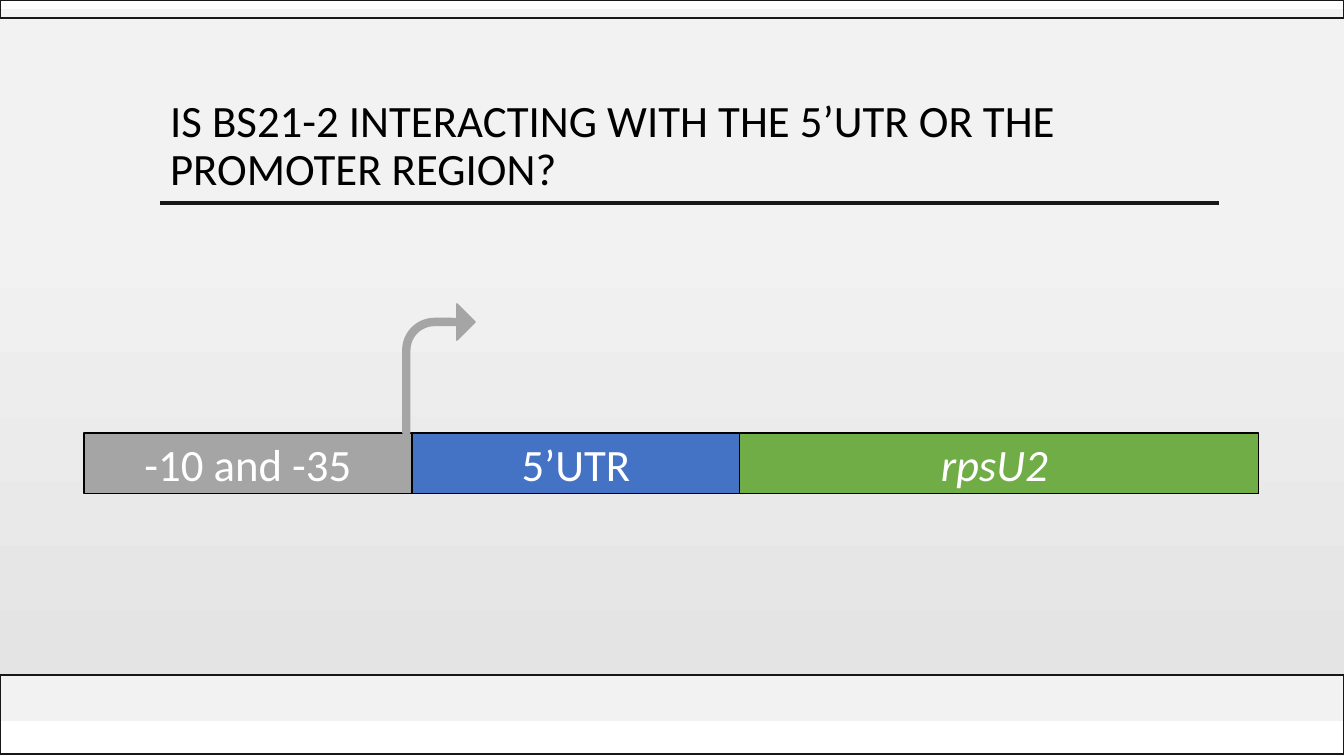
from dataclasses import dataclass

from lxml.etree import SubElement
from pptx import Presentation
from pptx.dml.color import RGBColor
from pptx.enum.shapes import MSO_CONNECTOR, MSO_SHAPE
from pptx.enum.text import MSO_ANCHOR, PP_ALIGN
from pptx.oxml.ns import qn
from pptx.util import Emu, Pt

W, H = 1344, 756


@dataclass(frozen=True)
class Theme:
    """Colours, font and type size of the slide."""
    font: str = "Calibri"
    size: int = 32
    panel: str = "F2F2F2"
    shade: str = "E4E4E4"
    rule: str = "181717"
    edge: str = "000001"
    black: str = "000000"
    white: str = "FFFFFF"
    grey: str = "A5A5A5"
    blue: str = "4472C4"
    green: str = "70AD47"


T = Theme()


def px(n):
    """Turn pixels into EMU."""
    return Emu(round(n * 914400 / 100.8))


def rgb(color):
    """Turn a hex string into a colour."""
    return RGBColor.from_string(color)


def add_box(shapes, box, fill=None, line=None, width=1, kind=MSO_SHAPE.RECTANGLE):
    """Add a preset shape with the given fill and outline."""
    sp = shapes.add_shape(kind, *map(px, box))
    sp.shadow.inherit = False
    if fill:
        sp.fill.solid()
        sp.fill.fore_color.rgb = rgb(fill)
    else:
        sp.fill.background()
    if line:
        sp.line.color.rgb = rgb(line)
        sp.line.width = Pt(width)
    else:
        sp.line.fill.background()
    return sp


def add_shade(shapes, box):
    """Add the panel that darkens towards the bottom."""
    sp = add_box(shapes, box)
    sp.fill.gradient()
    sp.fill.gradient_angle = 270
    for stop, color, position in zip(sp.fill.gradient_stops, (T.panel, T.shade), (0, 1)):
        stop.color.rgb = rgb(color)
        stop.position = position


def add_rule(shapes, x1, x2, y, color, width, opacity=100):
    """Add a horizontal line."""
    cn = shapes.add_connector(MSO_CONNECTOR.STRAIGHT, px(x1), px(y), px(x2), px(y))
    cn.line.color.rgb = rgb(color)
    cn.line.width = Pt(width)
    sp_pr = cn._element.spPr
    if opacity < 100:
        clr = sp_pr.find(".//" + qn("a:srgbClr"))
        SubElement(clr, qn("a:alpha")).set("val", str(opacity * 1000))
    SubElement(sp_pr, qn("a:effectLst"))


def set_text(tf, text, color, align, italic=False):
    """Write one formatted paragraph into a text frame."""
    tf.word_wrap = True
    tf.vertical_anchor = MSO_ANCHOR.MIDDLE
    p = tf.paragraphs[0]
    p.text = text
    p.alignment = align
    p.font.name = T.font
    p.font.size = Pt(T.size)
    p.font.italic = italic
    p.font.color.rgb = rgb(color)
    return p


def add_title(s, text, box):
    """Place and format the title in front of the backdrop."""
    title = s.shapes.title
    title.left, title.top, title.width, title.height = map(px, box)
    p = set_text(title.text_frame, text, T.black, PP_ALIGN.LEFT)
    p.line_spacing = 0.9
    title._element.getparent().append(title._element)


def add_backdrop(shapes):
    """Add the panels, frames and rules behind the content."""
    add_box(shapes, (0, 10, W, 710), T.panel, T.panel, 1.25)
    add_shade(shapes, (0, 223, W, 452))
    add_rule(shapes, 0, W, 675, T.edge, 1, opacity=20)
    for top, height in ((675, 79), (0, 18)):
        add_box(shapes, (0, top, W, height), line=T.rule)
    add_rule(shapes, 160, 1219, 203, T.rule, 2.5)


def add_gene(shapes, left, top, height):
    """Add the row of gene regions and the transcription start arrow."""
    regions = (
        ("-10 and -35", 328, T.grey, False),
        ("5’UTR", 328, T.blue, False),
        ("rpsU2 ", 519, T.green, True),
    )
    for text, width, fill, italic in regions:
        sp = add_box(shapes, (left, top, width, height), fill, T.black, 0.75)
        tf = sp.text_frame
        tf.margin_left = tf.margin_right = tf.margin_top = tf.margin_bottom = px(10)
        set_text(tf, text, T.white, PP_ALIGN.CENTER, italic)
        left += width
    arrow = add_box(shapes, (403, top - 129, 72, 129), T.grey, T.grey, 1.25,
                    MSO_SHAPE.BENT_ARROW)
    for i, value in enumerate((0.093, 0.25, 0.25, 0.438)):
        arrow.adjustments[i] = value


def main():
    """Build and save the slide."""
    prs = Presentation()
    prs.slide_width, prs.slide_height = px(W), px(H)
    s = prs.slides.add_slide(prs.slide_layouts[5])
    add_backdrop(s.shapes)
    add_title(s, "IS BS21-2 INTERACTING WITH THE 5’UTR OR THE PROMOTER REGION?",
              (160, 89, 1058, 116))
    add_gene(s.shapes.add_group_shape().shapes, 84, 433, 61)
    prs.save("out.pptx")


if __name__ == "__main__":
    main()
